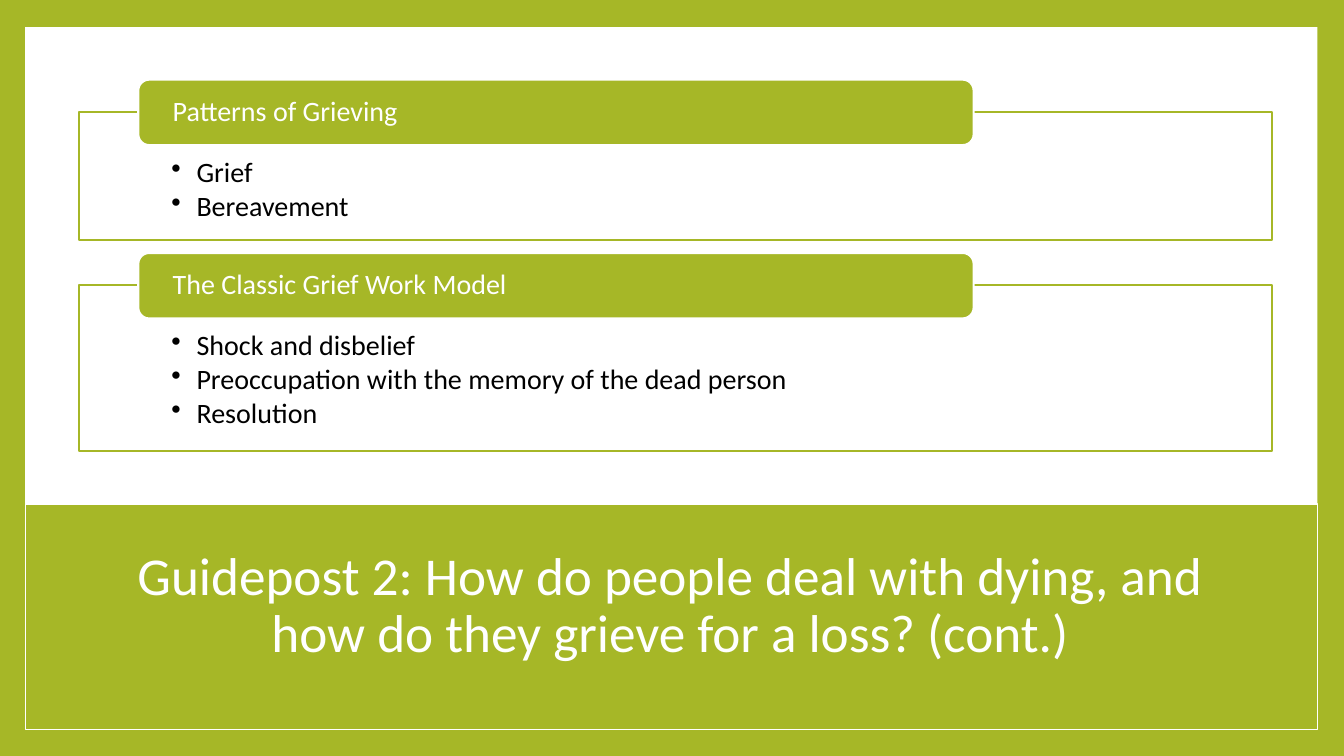
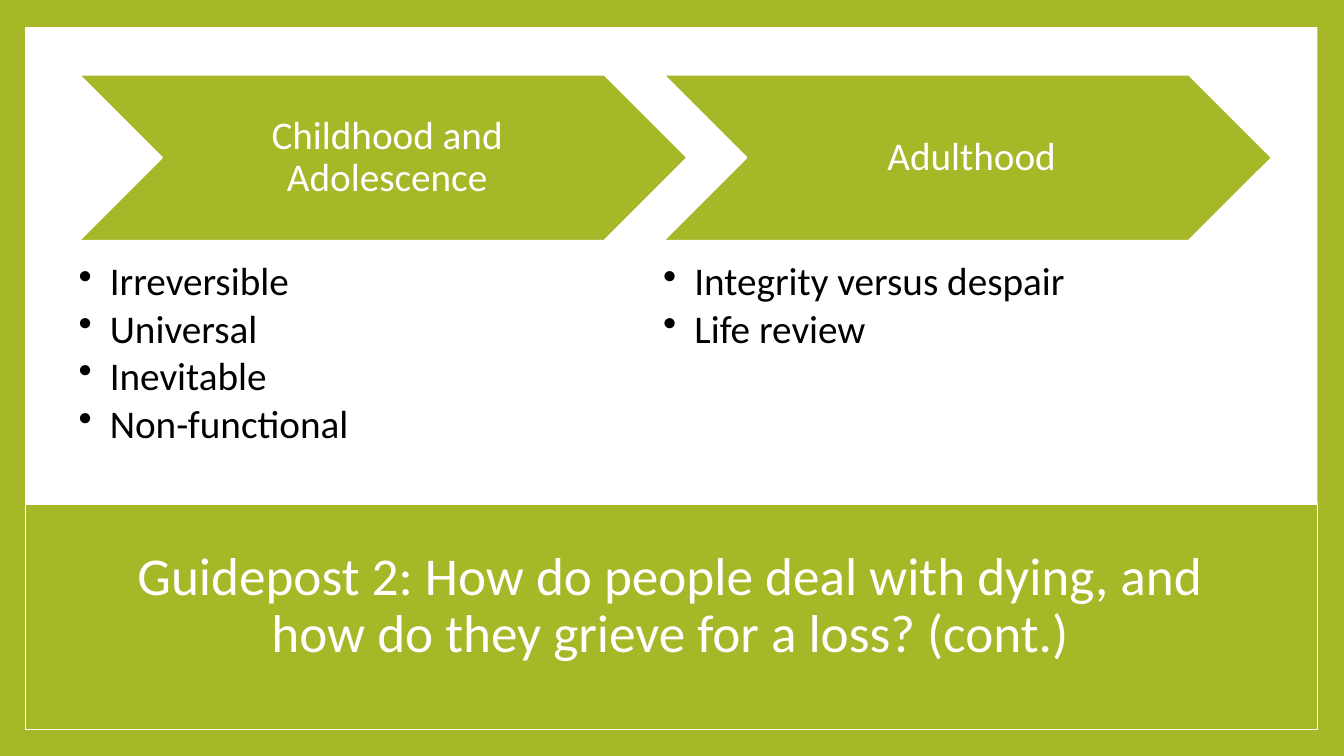
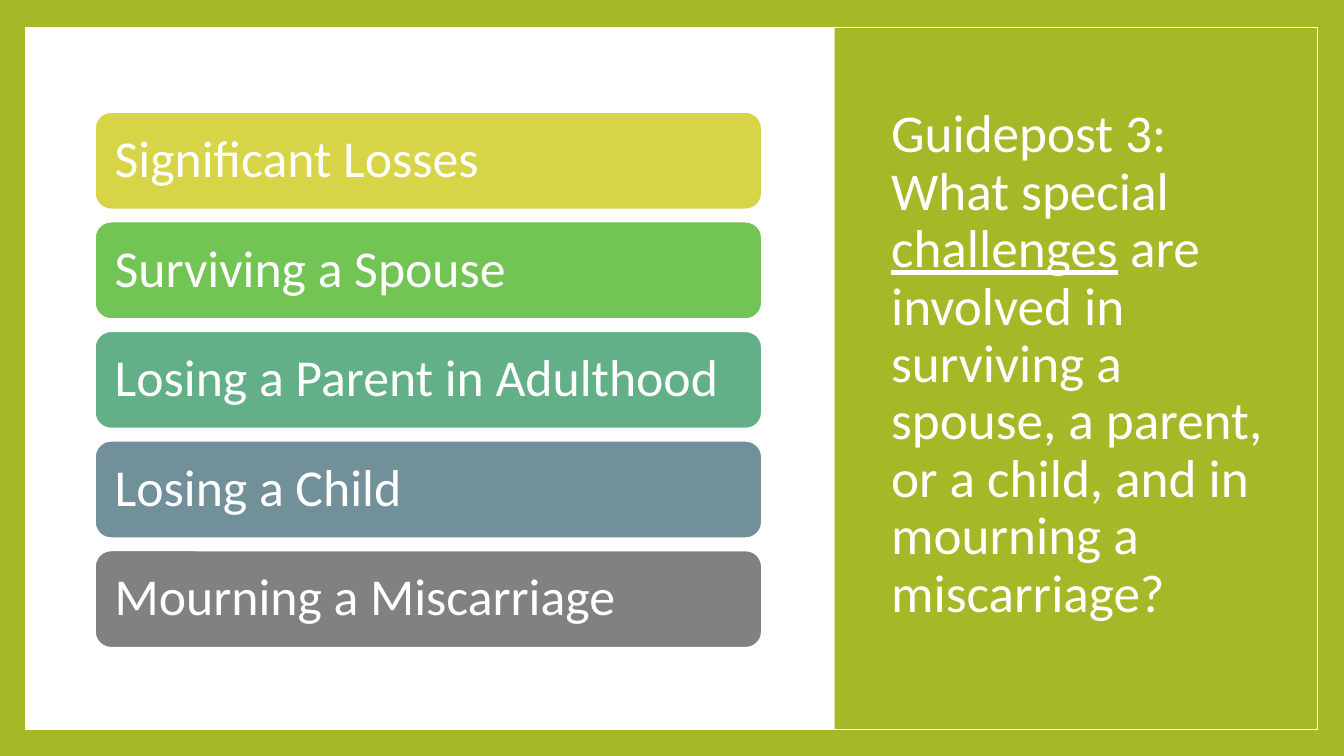
from dataclasses import dataclass

from lxml import etree
from pptx import Presentation
from pptx import util as u
from pptx.dml import color
from pptx.enum import shapes, text as t
from pptx.oxml import ns

WIDTH = u.Inches(13.33)
HEIGHT = u.Inches(7.5)
GRID_COLUMNS = 160
UNIT = WIDTH / GRID_COLUMNS
FONT = "Calibri"
TITLE_SIZE = 38
COLORS = {
    "green": "A6B727",
    "white": "FFFFFF",
    "black": "000000",
    "yellow": "D7D447",
    "leaf": "72C454",
    "teal": "62AF88",
    "slate": "71909A",
    "gray": "818183",
}


@dataclass
class Box:
    left: float
    top: float
    width: float
    height: float

    def lengths(self):
        return [u.Emu(round(n * UNIT)) for n in (self.left, self.top, self.width, self.height)]


PAGE = Box(0, 0, GRID_COLUMNS, 90)
FRAME = Box(3, 3.24, 153.84, 83.64)
TITLE_BAND = Box(FRAME.left, 60, FRAME.width, 26.88)
SIDE_PANEL = Box(99.36, 0, 60.64, 90)
PANELS = Box(9.36, 13.32, 142.08, 40.44)
STAGES = Box(9.36, 8.88, 142.08, 45.48)
BARS = Box(11.28, 13.32, 79.44, 63.84)

GUIDEPOST_2 = ("Guidepost 2: How do people deal with dying, "
               "and how do they grieve for a loss? (cont.)")
GUIDEPOST_3 = ("Guidepost 3: What special challenges are involved in surviving "
               "a spouse, a parent, or a child, and in mourning a miscarriage?")


def rgb(name):
    return color.RGBColor.from_string(COLORS[name])


def add_block(slide, box, kind="RECTANGLE", fill=None, line=None, line_width=1.5):
    shape = slide.shapes.add_shape(shapes.MSO_SHAPE[kind], *box.lengths())
    shape.shadow.inherit = False
    if fill:
        shape.fill.solid()
        shape.fill.fore_color.rgb = rgb(fill)
    else:
        shape.fill.background()
    if line:
        shape.line.color.rgb = rgb(line)
        shape.line.width = u.Pt(line_width)
    else:
        shape.line.fill.background()
    return shape


def add_text_box(slide, box, paragraphs, **text_format):
    write_text(slide.shapes.add_textbox(*box.lengths()), paragraphs, **text_format)


def add_bullet(paragraph, indent):
    properties = paragraph._p.get_or_add_pPr()
    length = round(indent * UNIT)
    properties.set("marL", str(length))
    properties.set("indent", str(-length))
    etree.SubElement(properties, ns.qn("a:buChar")).set("char", "•")


def write_text(shape, paragraphs, size=20, ink="white", align="LEFT", anchor="MIDDLE",
               insets=(1.2, 0.6, 1.2, 0.6), bullet_indent=None, underlined=None):
    frame = shape.text_frame
    frame.word_wrap = True
    frame.vertical_anchor = t.MSO_ANCHOR[anchor]
    (frame.margin_left, frame.margin_top,
     frame.margin_right, frame.margin_bottom) = [round(n * UNIT) for n in insets]
    for number, words in enumerate(paragraphs):
        paragraph = frame.add_paragraph() if number else frame.paragraphs[0]
        paragraph.alignment = t.PP_ALIGN[align]
        paragraph.line_spacing = 0.9
        if bullet_indent:
            paragraph.space_after = u.Pt(0.13 * size)
            add_bullet(paragraph, bullet_indent)
        for part in words.partition(underlined) if underlined else [words]:
            run = paragraph.add_run()
            run.text = part
            run.font.name = FONT
            run.font.size = u.Pt(size)
            run.font.color.rgb = rgb(ink)
            if part == underlined:
                run.font.underline = True


def start_slide(presentation):
    slide = presentation.slides.add_slide(presentation.slide_layouts[6])
    add_block(slide, PAGE, fill="green")
    add_block(slide, FRAME, fill="white")
    return slide


def add_title_band(slide, box, title):
    add_block(slide, box, fill="green", line="white", line_width=1)
    title_box = Box(box.left + 12, box.top + 3.36, box.width - 24.24, 17.76)
    add_text_box(slide, title_box, [title], size=TITLE_SIZE, align="CENTER")


def add_side_title(slide, box, title, underlined):
    add_block(slide, box, fill="green")
    title_box = Box(box.left + 5.52, box.top + 8.04, 46.92, 70.92)
    add_text_box(slide, title_box, [title], size=TITLE_SIZE, underlined=underlined)
    add_block(slide, FRAME, line="white", line_width=1)


def add_tabbed_panels(slide, box, panels):
    top = box.top
    for heading, points in panels:
        height = 6.12 + 4.56 * len(points)
        panel = add_block(slide, Box(box.left, top, box.width, height),
                          fill="white", line="green")
        write_text(panel, points, ink="black", anchor="TOP",
                   insets=(11.04, 5.52, 11.04, 1.92), bullet_indent=3)
        tab_box = Box(box.left + 0.05 * box.width, top - 3.84, 0.7 * box.width, 7.8)
        tab = add_block(slide, tab_box, "ROUNDED_RECTANGLE", "green", "white")
        write_text(tab, [heading], insets=(3.72, 0, 3.72, 0))
        top += height + 5.4


def add_stages(slide, box, stages):
    pitch_share = 0.96
    width = box.width / (1 + pitch_share * (len(stages) - 1))
    for number, (heading, points) in enumerate(stages):
        left = box.left + number * pitch_share * width
        chevron = add_block(slide, Box(left, box.top, width, 19.8),
                            "CHEVRON", "green", "white")
        write_text(chevron, [heading], size=28, align="CENTER",
                   insets=(1.44, 0.48, 0.48, 0.48))
        points_box = Box(left, box.top + 22.32, 0.8 * width, box.height - 22.32)
        add_text_box(slide, points_box, points, size=28, ink="black", anchor="TOP",
                     insets=(0, 0, 0, 0), bullet_indent=3.72)


def add_bars(slide, box, bars):
    height = 11.64
    pitch = (box.height - height) / (len(bars) - 1)
    for number, (label, fill) in enumerate(bars):
        bar_box = Box(box.left, box.top + number * pitch, box.width, height)
        bar = add_block(slide, bar_box, "ROUNDED_RECTANGLE", fill, "white")
        write_text(bar, [label], size=37, insets=(1.8, 1.8, 1.8, 1.8))


def main():
    presentation = Presentation()
    presentation.slide_width = WIDTH
    presentation.slide_height = HEIGHT

    grieving = start_slide(presentation)
    add_title_band(grieving, TITLE_BAND, GUIDEPOST_2)
    add_tabbed_panels(grieving, PANELS, [
        ("Patterns of Grieving", ["Grief", "Bereavement"]),
        ("The Classic Grief Work Model", [
            "Shock and disbelief",
            "Preoccupation with the memory of the dead person",
            "Resolution",
        ]),
    ])

    lifespan = start_slide(presentation)
    add_title_band(lifespan, TITLE_BAND, GUIDEPOST_2)
    add_stages(lifespan, STAGES, [
        ("Childhood and Adolescence",
         ["Irreversible", "Universal", "Inevitable", "Non-functional"]),
        ("Adulthood", ["Integrity versus despair", "Life review"]),
    ])

    losses = start_slide(presentation)
    add_side_title(losses, SIDE_PANEL, GUIDEPOST_3, underlined="challenges")
    add_bars(losses, BARS, [
        ("Significant Losses", "yellow"),
        ("Surviving a Spouse", "leaf"),
        ("Losing a Parent in Adulthood", "teal"),
        ("Losing a Child", "slate"),
        ("Mourning a Miscarriage", "gray"),
    ])

    presentation.save("out.pptx")


if __name__ == "__main__":
    main()
